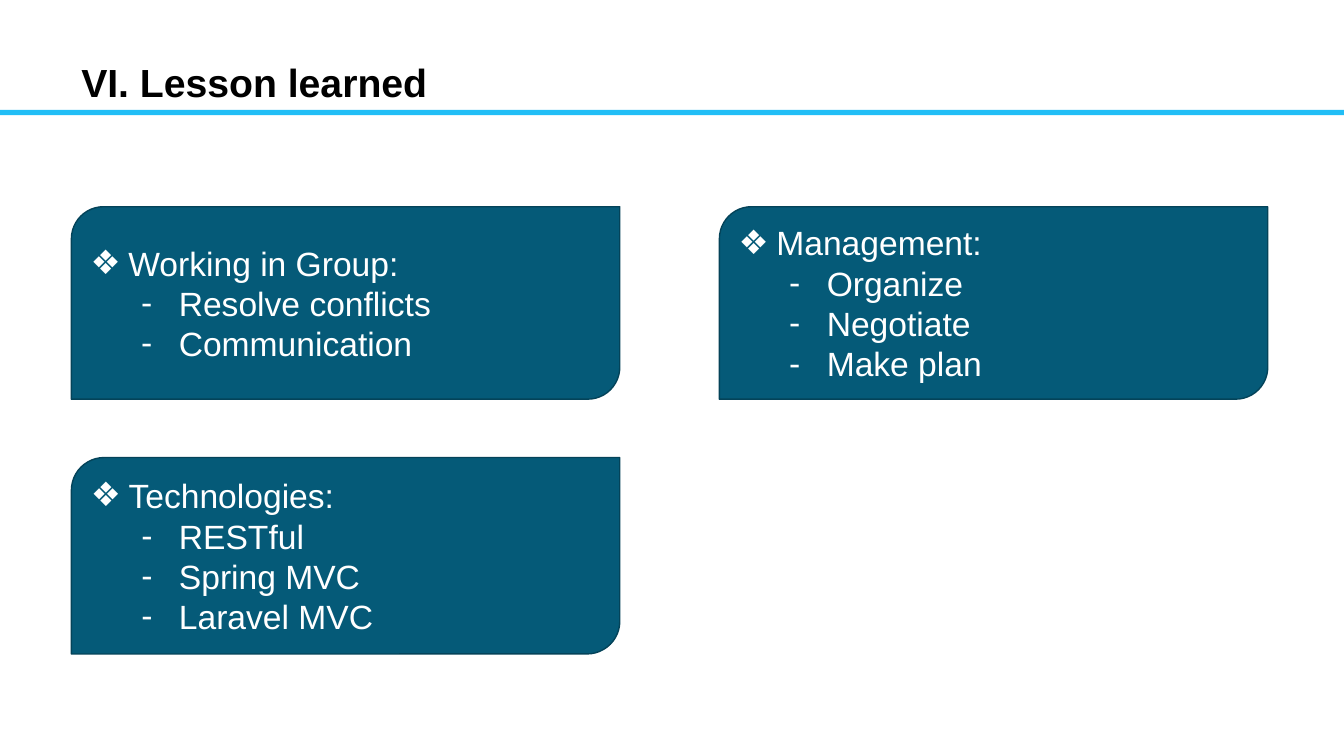
"""Build the "Lesson learned" slide: a ruled title and three cards of bullets."""
from lxml.etree import SubElement
from pptx import Presentation
from pptx.dml.color import RGBColor as Color
from pptx.enum.shapes import MSO_SHAPE as Shape
from pptx.enum.text import MSO_ANCHOR as Anchor, MSO_AUTO_SIZE as AutoSize, PP_ALIGN as Align
from pptx.oxml.ns import qn
from pptx.util import Cm, Pt

TITLE = "VI. Lesson learned"
CARDS = [
    {"column": 0, "row": 0, "heading": "Working in Group:",
     "points": ["Resolve conflicts", "Communication"]},
    {"column": 1, "row": 0, "heading": "Management:",
     "points": ["Organize", "Negotiate", "Make plan"]},
    {"column": 0, "row": 1, "heading": "Technologies:",
     "points": ["RESTful", "Spring MVC", "Laravel MVC"]},
]
THEME = {
    "rule": Color.from_string("21BEF6"),
    "card": Color.from_string("055A78"),
    "edge": Color.from_string("044359"),
    "title_font": {"name": "Arial", "size": Pt(28), "bold": True,
                   "color": Color.from_string("000000")},
    "card_font": {"name": "Arial", "size": Pt(24), "bold": False,
                  "color": Color.from_string("FFFFFF")},
}
SLIDE_WIDTH, SLIDE_HEIGHT = Cm(33.87), Cm(19.05)
LEFT, TOP = Cm(1.8), Cm(5.21)
COLUMN_STEP, ROW_STEP = Cm(16.33), Cm(6.32)
CARD_WIDTH, ROW_HEIGHTS = Cm(13.82), [Cm(4.85), Cm(4.95)]
HANGING = Cm(0.95)
LEVELS = [{"bullet": "❖", "margin": HANGING}, {"bullet": "-", "margin": Cm(2.22)}]


def style_font(font, style):
    for name, value in style.items():
        if name == "color":
            font.color.rgb = value
        else:
            setattr(font, name, value)


def add_block(slide, kind, box, fill, edge=None):
    shape = slide.shapes.add_shape(kind, *box)
    shape.shadow.inherit = False
    shape.fill.solid()
    shape.fill.fore_color.rgb = fill
    if edge is None:
        shape.line.fill.background()
    else:
        shape.line.color.rgb = edge
        shape.line.width = Pt(1)
    return shape


def write_bullet(paragraph, text, level):
    paragraph.level = level
    paragraph.alignment = Align.LEFT
    properties = paragraph._p.get_or_add_pPr()
    properties.set("marL", str(LEVELS[level]["margin"]))
    properties.set("indent", str(-HANGING))
    SubElement(properties, qn("a:buFont")).set("typeface", "Arial")
    SubElement(properties, qn("a:buChar")).set("char", LEVELS[level]["bullet"])
    run = paragraph.add_run()
    run.text = text
    style_font(run.font, THEME["card_font"])


def add_title(slide):
    add_block(slide, Shape.RECTANGLE, (0, Cm(2.77), SLIDE_WIDTH, Cm(0.13)), THEME["rule"])
    frame = slide.shapes.add_textbox(LEFT, Cm(1.35), Cm(20.93), Cm(1.45)).text_frame
    frame.word_wrap = True
    frame.auto_size = AutoSize.SHAPE_TO_FIT_TEXT
    run = frame.paragraphs[0].add_run()
    run.text = TITLE
    style_font(run.font, THEME["title_font"])


def add_card(slide, card):
    column, row = card["column"], card["row"]
    box = (LEFT + column * COLUMN_STEP, TOP + row * ROW_STEP, CARD_WIDTH, ROW_HEIGHTS[row])
    shape = add_block(slide, Shape.ROUND_2_DIAG_RECTANGLE, box, THEME["card"], THEME["edge"])
    frame = shape.text_frame
    frame.word_wrap = True
    frame.vertical_anchor = Anchor.MIDDLE
    write_bullet(frame.paragraphs[0], card["heading"], 0)
    for point in card["points"]:
        write_bullet(frame.add_paragraph(), point, 1)


def main():
    presentation = Presentation()
    presentation.slide_width, presentation.slide_height = SLIDE_WIDTH, SLIDE_HEIGHT
    slide = presentation.slides.add_slide(presentation.slide_layouts[6])
    add_title(slide)
    for card in CARDS:
        add_card(slide, card)
    presentation.save("out.pptx")


if __name__ == "__main__":
    main()
